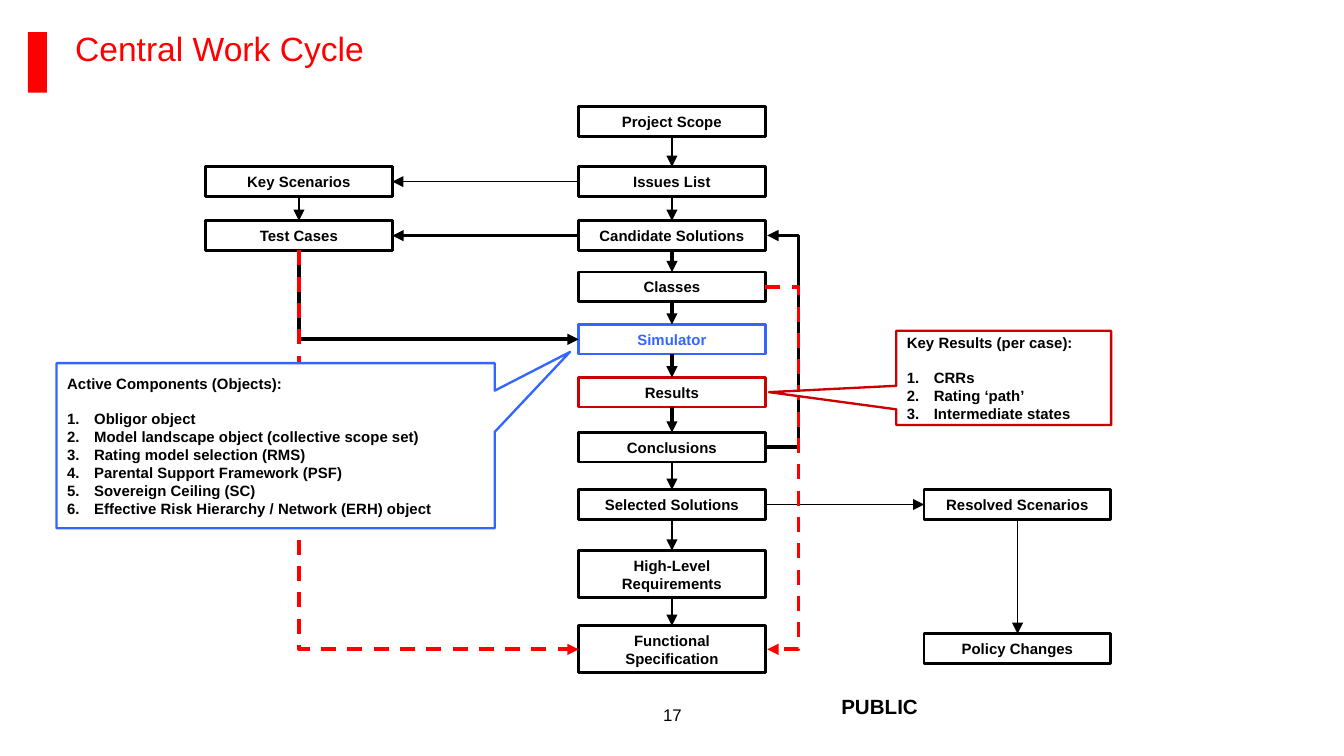
"""Build the Central Work Cycle flowchart slide."""
from dataclasses import dataclass

from pptx import Presentation
from pptx.dml.color import RGBColor as Rgb
from pptx.enum.dml import MSO_LINE as Dash
from pptx.enum.shapes import MSO_CONNECTOR as Route, MSO_SHAPE as Preset
from pptx.enum.text import MSO_ANCHOR as Anchor, MSO_AUTO_SIZE as Fit, PP_ALIGN as Align
from pptx.oxml.ns import qn
from pptx.oxml.xmlchemy import OxmlElement as Element
from pptx.util import Cm, Pt


@dataclass(frozen=True)
class Theme:
    font: str = "Arial"
    black: str = "000000"
    white: str = "FFFFFF"
    red: str = "FF0000"
    dark_red: str = "CC0000"
    blue: str = "3366FF"
    title: float = 18
    label: float = 8
    number: float = 9
    marking: float = 11
    thin: float = 0.75
    callout: float = 1.25
    border: float = 1.5
    thick: float = 2


theme = Theme()


def write(shape, text, size, color, bold=True, align=Align.CENTER, inset=(0.2, 0.1, 0.2, 0.1)):
    frame = shape.text_frame
    frame.text = text
    frame.word_wrap = True
    frame.margin_left, frame.margin_top, frame.margin_right, frame.margin_bottom = map(Cm, inset)
    for para in frame.paragraphs:
        para.alignment = align
        for span in para.runs:
            span.font.name, span.font.size, span.font.bold = theme.font, Pt(size), bold
            span.font.color.rgb = Rgb.from_string(color)
    return frame


def link(route, start, end, weight, color=theme.black, dash=None):
    line = page.shapes.add_connector(route, *map(int, start), *map(int, end))
    line.line.color.rgb = Rgb.from_string(color)
    line.line.width = Pt(weight)
    if dash:
        line.line.dash_style = dash
    arrow = Element("a:tailEnd")
    arrow.set("type", "triangle")
    line.line._get_or_add_ln().append(arrow)
    line._element.spPr.append(Element("a:effectLst"))
    return line


deck = Presentation()
deck.slide_width, deck.slide_height = Cm(25.4), Cm(14.28)
page = deck.slides.add_slide(deck.slide_layouts[5])

bar = page.shapes.add_shape(Preset.RECTANGLE, Cm(0.53), Cm(0.61), Cm(0.36), Cm(1.14))
bar.shadow.inherit = False
bar.fill.solid()
bar.fill.fore_color.rgb = Rgb.from_string(theme.red)
bar.line.fill.background()

title = page.shapes.title
title.left, title.top, title.width, title.height = Cm(1.42), Cm(0.61), Cm(22.58), Cm(1.42)
frame = write(title, "Central Work Cycle", theme.title, theme.red, False, Align.LEFT, (0, 0, 0, 0.05))
frame.vertical_anchor, frame.auto_size = Anchor.TOP, Fit.NONE
frame.paragraphs[0].line_spacing = 0.9

number = page.shapes.add_textbox(Cm(12.52), Cm(13.31), Cm(0.38), Cm(0.38))
frame = write(number, "17", theme.number, theme.black, False, inset=(0, 0, 0, 0))
frame.word_wrap, frame.vertical_anchor, frame.auto_size = False, Anchor.MIDDLE, Fit.SHAPE_TO_FIT_TEXT

marking = page.shapes.add_textbox(Cm(12.6), Cm(13), Cm(8.05), Cm(0.99))
write(marking, "PUBLIC", theme.marking, theme.black)

LEFT, CENTER, RIGHT = 5.65, 12.7, 19.23
ONE_LINE, TWO_LINES, BOX_WIDTH = 0.56, 0.89, 3.53
steps = [
    ("Project Scope", CENTER, 2.02, ONE_LINE),
    ("Issues List", CENTER, 3.15, ONE_LINE),
    ("Candidate Solutions", CENTER, 4.17, ONE_LINE),
    ("Classes", CENTER, 5.14, ONE_LINE),
    ("Simulator", CENTER, 6.13, ONE_LINE),
    ("Results", CENTER, 7.13, ONE_LINE),
    ("Conclusions", CENTER, 8.17, ONE_LINE),
    ("Selected Solutions", CENTER, 9.25, ONE_LINE),
    ("High-Level Requirements", CENTER, 10.4, TWO_LINES),
    ("Functional Specification", CENTER, 11.82, TWO_LINES),
    ("Key Scenarios", LEFT, 3.15, ONE_LINE),
    ("Test Cases", LEFT, 4.17, ONE_LINE),
    ("Resolved Scenarios", RIGHT, 9.25, ONE_LINE),
    ("Policy Changes", RIGHT, 11.97, ONE_LINE),
]
borders = {"Simulator": theme.blue, "Results": theme.dark_red}
inks = {"Simulator": theme.blue}
boxes = {}
for name, middle, top, height in steps:
    box = page.shapes.add_shape(
        Preset.RECTANGLE, Cm(middle - BOX_WIDTH / 2), Cm(top), Cm(BOX_WIDTH), Cm(height))
    box.shadow.inherit = False
    box.fill.solid()
    box.fill.fore_color.rgb = Rgb.from_string(theme.white)
    box.line.color.rgb = Rgb.from_string(borders.get(name, theme.black))
    box.line.width = Pt(theme.border)
    frame = write(box, name, theme.label, inks.get(name, theme.black))
    frame.vertical_anchor, frame.auto_size = Anchor.MIDDLE, Fit.SHAPE_TO_FIT_TEXT
    boxes[name] = box

spine = [name for name, middle, *_ in steps if middle == CENTER]
flows = [(source, target, theme.thick if 2 <= index <= 5 else theme.thin)
         for index, (source, target) in enumerate(zip(spine, spine[1:]))]
flows += [
    ("Issues List", "Key Scenarios", theme.thin),
    ("Key Scenarios", "Test Cases", theme.thin),
    ("Candidate Solutions", "Test Cases", theme.thick),
    ("Selected Solutions", "Resolved Scenarios", theme.thin),
    ("Resolved Scenarios", "Policy Changes", theme.thin),
]
for source, target, weight in flows:
    first, last = boxes[source], boxes[target]
    if first.left == last.left:
        x = first.left + first.width / 2
        start, end = (x, first.top + first.height), (x, last.top)
    else:
        y = first.top + first.height / 2
        rightward = first.left < last.left
        start = (first.left + first.width * rightward, y)
        end = (last.left + last.width * (not rightward), y)
    link(Route.STRAIGHT, start, end, weight)

lane, tip = Cm(15.09), Cm(14.5)
for source, target, color, dash in [
    ("Conclusions", "Candidate Solutions", theme.black, None),
    ("Classes", "Functional Specification", theme.red, Dash.DASH),
]:
    first, last = boxes[source], boxes[target]
    edge = first.left + first.width
    line = link(Route.ELBOW, (edge, first.top + first.height / 2),
                (tip, last.top + last.height / 2), theme.thick, color, dash)
    guide = Element("a:gd")
    guide.set("name", "adj1")
    guide.set("fmla", f"val {round((lane - edge) / (tip - edge) * 100000)}")
    line._element.spPr.find(qn("a:prstGeom")).get_or_add_avLst().append(guide)

source = boxes["Test Cases"]
for target, color, dash in [
    ("Simulator", theme.black, None),
    ("Functional Specification", theme.red, Dash.DASH),
]:
    last = boxes[target]
    x, y = source.left + source.width / 2, source.top + source.height
    across, down = last.left - x, last.top + last.height / 2 - y
    mid_x, mid_y = x + across / 2, y + down / 2
    line = link(Route.ELBOW, (mid_x + down / 2, mid_y - across / 2),
                (mid_x - down / 2, mid_y + across / 2), theme.thick, color, dash)
    line._element.spPr.find(qn("a:prstGeom")).set("prst", "bentConnector2")
    line._element.spPr.find(qn("a:xfrm")).set("rot", str(270 * 60000))

callouts = [
    ((1.07, 6.86, 8.28, 3.12), (0.672, -0.568), theme.blue, "Active Components (Objects):", [
        "Obligor object", "Model landscape object (collective scope set)",
        "Rating model selection (RMS)", "Parental Support Framework (PSF)",
        "Sovereign Ceiling (SC)", "Effective Risk Hierarchy / Network (ERH) object"]),
    ((16.94, 6.25, 4.06, 1.78), (-1.093, 0.151), theme.dark_red, "Key Results (per case):", [
        "CRRs", "Rating ‘path’", "Intermediate states"]),
]
for place, pointer, color, heading, items in callouts:
    callout = page.shapes.add_shape(Preset.RECTANGULAR_CALLOUT, *map(Cm, place))
    callout.adjustments[0], callout.adjustments[1] = pointer
    callout.shadow.inherit = False
    callout.fill.solid()
    callout.fill.fore_color.rgb = Rgb.from_string(theme.white)
    callout.line.color.rgb = Rgb.from_string(color)
    callout.line.width = Pt(theme.callout)
    frame = write(callout, "\n".join([heading, *items]), theme.label, theme.black, align=Align.LEFT)
    frame.vertical_anchor = Anchor.MIDDLE
    frame.paragraphs[0].space_after = Pt(9.6)
    for para in frame.paragraphs[1:]:
        layout = para._p.get_or_add_pPr()
        layout.set("marL", str(Cm(0.51)))
        layout.set("indent", str(-Cm(0.51)))
        numbering = Element("a:buAutoNum")
        numbering.set("type", "arabicPeriod")
        layout.append(numbering)

deck.save("out.pptx")
